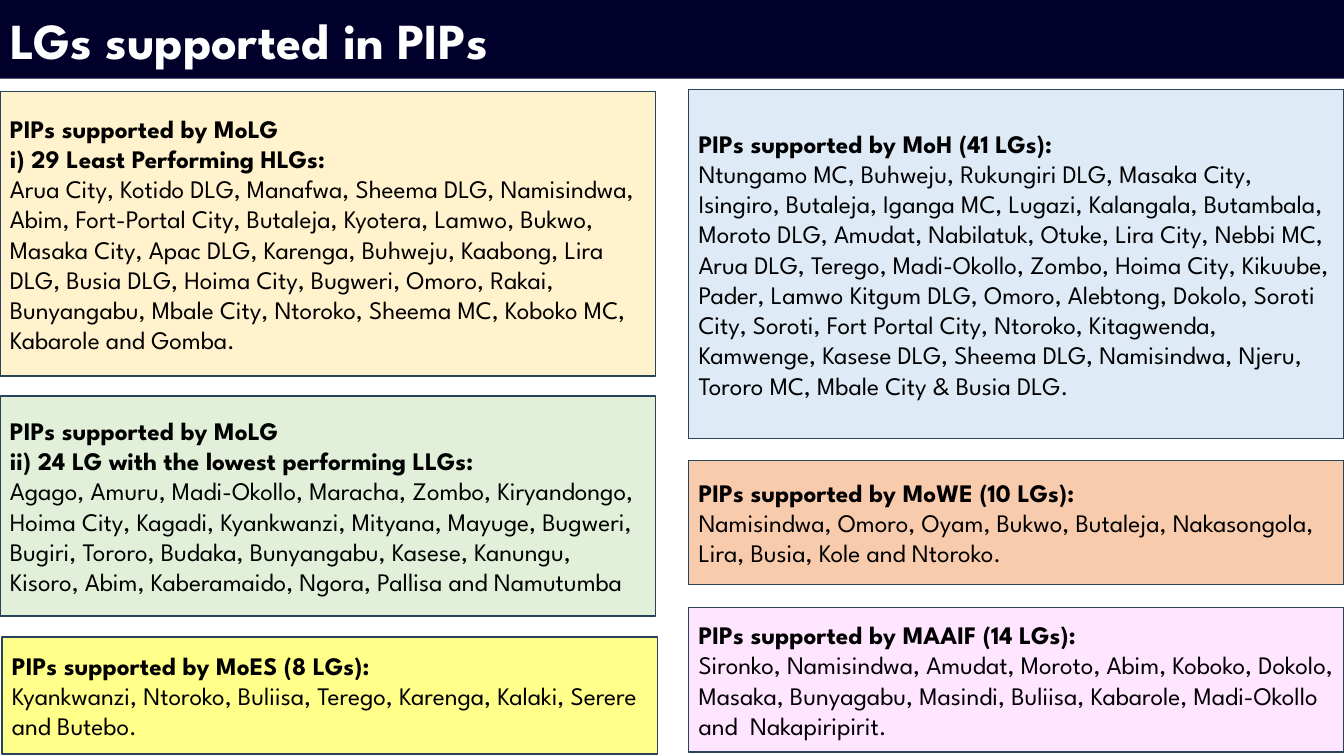
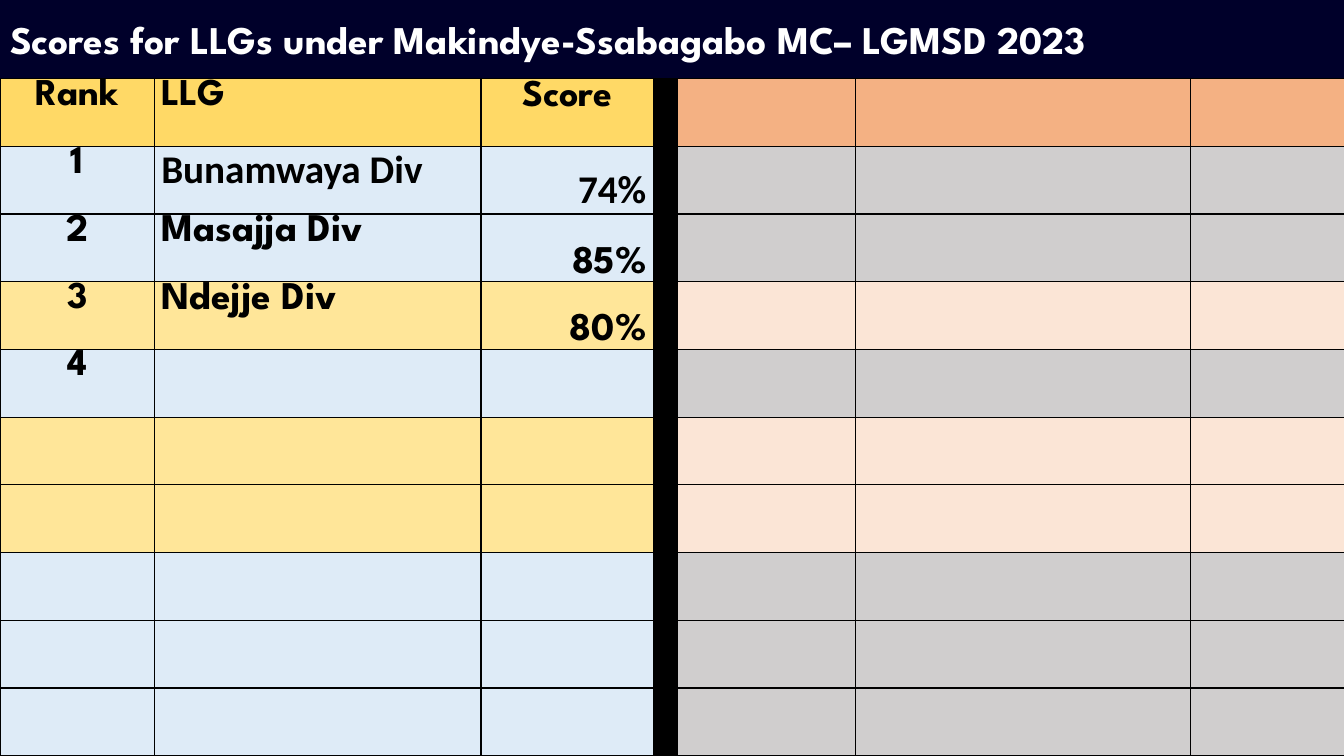
"""Build two slides: local governments supported in PIPs, and LLG scores."""
from lxml import etree
from pptx import Presentation
from pptx import util as u
from pptx.dml.color import RGBColor
from pptx.enum import shapes, text
from pptx.oxml import ns

FONT, PLAIN_FONT = "League Spartan", "Calibri"
COLORS = {
    "band": "00002A", "white": "FFFFFF", "black": "000000", "outline": "28445D",
    "cream": "FFF2CC", "green": "E2F0D9", "yellow": "FFFF89",
    "blue": "DEEBF7", "orange": "F8CBAD", "pink": "FFE5FF",
    "gold": "FFD966", "light gold": "FFE699",
    "copper": "F4B183", "peach": "FBE5D6", "grey": "D0CECE",
}
WIDTH, HEIGHT, BAND_HEIGHT = 13.33, 7.5, 0.78
LEFT, RIGHT, BOX_WIDTH = 0, 6.83, 6.5
ALIGN, ANCHOR = text.PP_ALIGN, text.MSO_ANCHOR

SUPPORT_TITLE = "LGs supported in PIPs"
SUPPORT_BOXES = [
    (LEFT, 0.91, 2.82, "cream",
     ["PIPs supported by MoLG", "i) 29 Least Performing HLGs:"],
     "Arua City, Kotido DLG, Manafwa, Sheema DLG, Namisindwa, Abim, Fort-Portal City, "
     "Butaleja, Kyotera, Lamwo, Bukwo, Masaka City, Apac DLG, Karenga, Buhweju, Kaabong, "
     "Lira DLG, Busia DLG, Hoima City, Bugweri, Omoro, Rakai, Bunyangabu, Mbale City, "
     "Ntoroko, Sheema MC, Koboko MC, Kabarole and Gomba."),
    (LEFT, 3.93, 2.18, "green",
     ["PIPs supported by MoLG", "ii) 24 LG with the lowest performing LLGs:"],
     "Agago, Amuru, Madi-Okollo, Maracha, Zombo, Kiryandongo, Hoima City, Kagadi, "
     "Kyankwanzi, Mityana, Mayuge, Bugweri, Bugiri, Tororo, Budaka, Bunyangabu, Kasese, "
     "Kanungu, Kisoro, Abim, Kaberamaido, Ngora, Pallisa and Namutumba"),
    (LEFT + 0.02, 6.32, 1.16, "yellow",
     ["PIPs supported by MoES (8 LGs):"],
     "Kyankwanzi, Ntoroko, Buliisa, Terego, Karenga, Kalaki, Serere and Butebo."),
    (RIGHT, 0.89, 3.46, "blue",
     ["PIPs supported by MoH (41 LGs):"],
     "Ntungamo MC, Buhweju, Rukungiri DLG, Masaka City, Isingiro, Butaleja, Iganga MC, "
     "Lugazi, Kalangala, Butambala, Moroto DLG, Amudat, Nabilatuk, Otuke, Lira City, "
     "Nebbi MC, Arua DLG, Terego, Madi-Okollo, Zombo, Hoima City, Kikuube, Pader, "
     "Lamwo Kitgum DLG, Omoro, Alebtong, Dokolo, Soroti City, Soroti, Fort Portal City, "
     "Ntoroko, Kitagwenda, Kamwenge, Kasese DLG, Sheema DLG, Namisindwa, Njeru, "
     "Tororo MC, Mbale City & Busia DLG."),
    (RIGHT, 4.57, 1.23, "orange",
     ["PIPs supported by MoWE (10 LGs):"],
     "Namisindwa, Omoro, Oyam, Bukwo, Butaleja, Nakasongola, Lira, Busia, Kole and Ntoroko."),
    (RIGHT, 6.03, 1.43, "pink",
     ["PIPs supported by MAAIF (14 LGs):"],
     "Sironko, Namisindwa, Amudat, Moroto, Abim, Koboko, Dokolo, Masaka, Bunyagabu, "
     "Masindi, Buliisa, Kabarole, Madi-Okollo and  Nakapiripirit."),
]

SCORE_TITLE = "Scores for LLGs under Makindye-Ssabagabo MC– LGMSD 2023"
COLUMN_WIDTHS = [1.53, 3.24, 1.71, 0.22, 1.77, 3.32, 1.53]
DIVIDER, DIVIDER_SPAN = 3, 8
SCORES = [
    ("Rank", "LLG", "Score"),
    ("1", "Bunamwaya Div", "74%"),
    ("2", "Masajja Div", "85%"),
    ("3", "Ndejje Div", "80%"),
    ("4",),
]
SMALL_TEXTS = {"Rank", "LLG", "Score", "3", "4"}
PLAIN_TEXTS = {"Bunamwaya Div", "74%"}
LINE_SPACING = {"Score": 1.05, "85%": 1.07, "80%": 1.07}
HEADER, COOL, WARM = ("gold", "copper"), ("blue", "grey"), ("light gold", "peach")
ROW_FILLS = [HEADER, COOL, COOL, WARM, COOL, WARM, WARM, COOL, COOL, COOL]


def rgb(name):
    return RGBColor.from_string(COLORS[name])


def paint(item, color):
    item.fill.solid()
    item.fill.fore_color.rgb = rgb(color)


def add_span(para, words, size, bold=True, color="black", font=FONT):
    span = para.add_run()
    span.text = words
    span.font.name, span.font.size, span.font.bold = font, u.Pt(size), bold
    span.font.color.rgb = rgb(color)


def add_titled_page(deck, words, size):
    page = deck.slides.add_slide(deck.slide_layouts[5])
    title = page.shapes.title
    title.left, title.top = u.Inches(0), u.Inches(0)
    title.width, title.height = u.Inches(WIDTH), u.Inches(BAND_HEIGHT)
    paint(title, "band")
    frame = title.text_frame
    frame.auto_size = text.MSO_AUTO_SIZE.NONE
    frame.vertical_anchor = ANCHOR.MIDDLE
    para = frame.paragraphs[0]
    para.alignment = ALIGN.LEFT
    add_span(para, words, size, color="white")
    return page


def add_support_box(page, left, top, height, color, headings, places):
    box = page.shapes.add_shape(
        shapes.MSO_SHAPE.RECTANGLE, u.Inches(left), u.Inches(top),
        u.Inches(BOX_WIDTH), u.Inches(height))
    box.shadow.inherit = False
    paint(box, color)
    box.line.color.rgb = rgb("outline")
    box.line.width = u.Pt(1)
    frame = box.text_frame
    frame.word_wrap = True
    frame.vertical_anchor = ANCHOR.MIDDLE
    lines = headings + [places]
    for index, words in enumerate(lines):
        para = frame.add_paragraph() if index else frame.paragraphs[0]
        para.alignment = ALIGN.LEFT
        add_span(para, words, 18, bold=index < len(headings))


def add_borders(cell):
    properties = cell._tc.get_or_add_tcPr()
    for side in ("a:lnL", "a:lnR", "a:lnT", "a:lnB"):
        line = etree.SubElement(properties, ns.qn(side), w=str(u.Pt(1)))
        fill = etree.SubElement(line, ns.qn("a:solidFill"))
        etree.SubElement(fill, ns.qn("a:srgbClr"), val=COLORS["black"])


def write_score(cell, words, row, column):
    cell.margin_left = cell.margin_right = u.Inches(0.07)
    cell.margin_top = cell.margin_bottom = u.Inches(0)
    if column == 2 and row:
        cell.vertical_anchor = ANCHOR.BOTTOM
    para = cell.text_frame.paragraphs[0]
    last = ALIGN.RIGHT if row else ALIGN.CENTER
    para.alignment = (ALIGN.CENTER, ALIGN.LEFT, last)[column]
    if words in LINE_SPACING:
        para.line_spacing = LINE_SPACING[words]
    plain = words in PLAIN_TEXTS
    if not plain:
        para.space_before = para.space_after = u.Pt(12)
    add_span(para, words, 27 if words in SMALL_TEXTS else 28,
             font=PLAIN_FONT if plain else FONT)


def add_score_table(page):
    body_height = HEIGHT - BAND_HEIGHT
    table = page.shapes.add_table(
        len(ROW_FILLS), len(COLUMN_WIDTHS), u.Inches(0), u.Inches(BAND_HEIGHT),
        u.Inches(WIDTH), u.Inches(body_height)).table
    table.first_row = table.horz_banding = False
    for column, width in zip(table.columns, COLUMN_WIDTHS):
        column.width = u.Inches(width)
    for row, (left_fill, right_fill) in enumerate(ROW_FILLS):
        table.rows[row].height = u.Inches(body_height / len(ROW_FILLS))
        fills = [left_fill] * DIVIDER + ["black"] + [right_fill] * DIVIDER
        for column, color in enumerate(fills):
            cell = table.cell(row, column)
            add_borders(cell)
            paint(cell, color)
    table.cell(0, DIVIDER).merge(table.cell(DIVIDER_SPAN - 1, DIVIDER))
    for row, values in enumerate(SCORES):
        for column, words in enumerate(values):
            write_score(table.cell(row, column), words, row, column)


def main():
    deck = Presentation()
    deck.slide_width, deck.slide_height = u.Inches(WIDTH), u.Inches(HEIGHT)
    support_page = add_titled_page(deck, SUPPORT_TITLE, 36)
    for details in SUPPORT_BOXES:
        add_support_box(support_page, *details)
    add_score_table(add_titled_page(deck, SCORE_TITLE, 28))
    deck.save("out.pptx")


if __name__ == "__main__":
    main()
